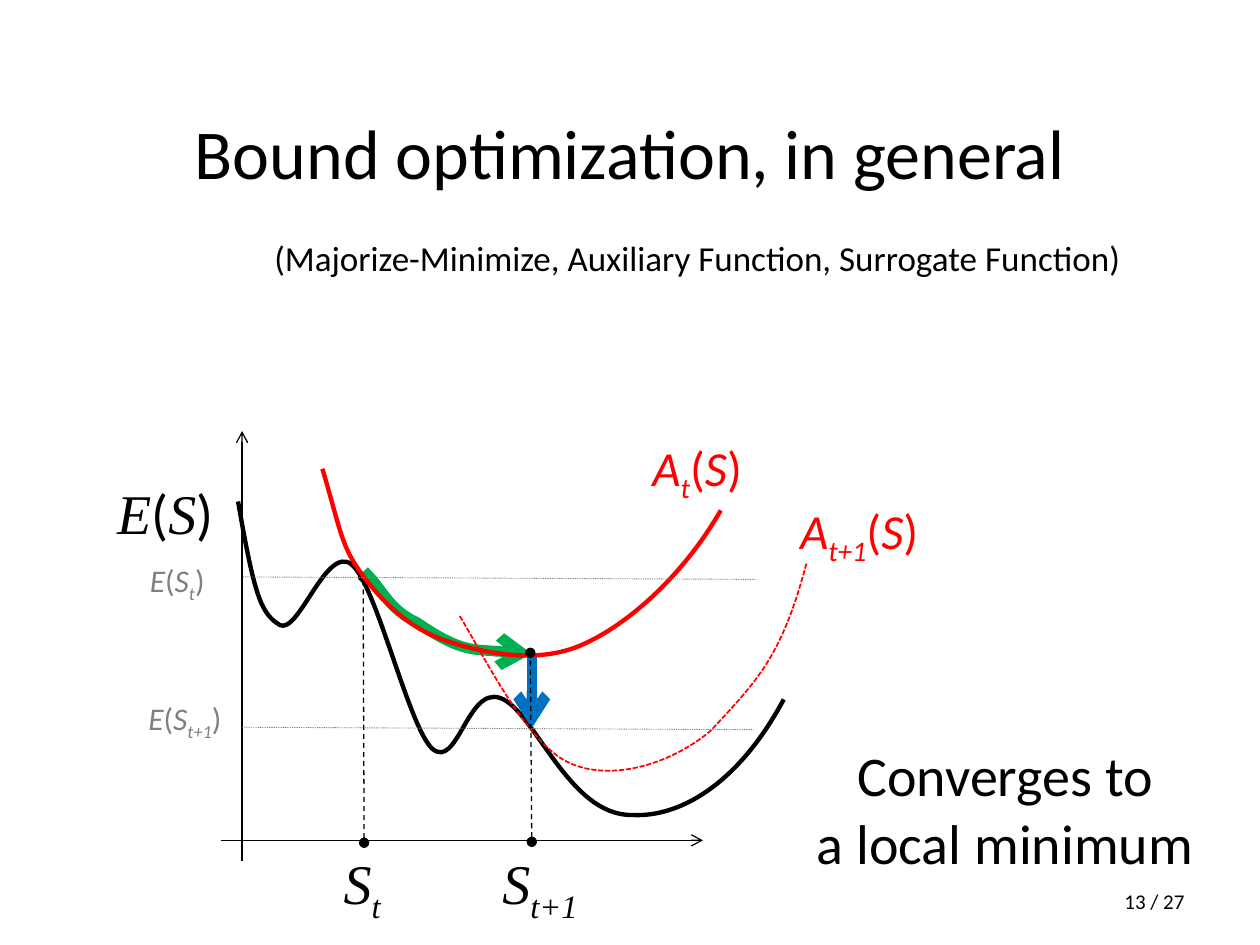
from dataclasses import dataclass
from typing import NamedTuple, Optional

from lxml.etree import SubElement
from pptx import Presentation
from pptx.dml.color import RGBColor
from pptx.enum.dml import MSO_LINE
from pptx.enum.shapes import MSO_CONNECTOR
from pptx.enum.text import MSO_ANCHOR, MSO_AUTO_SIZE, PP_ALIGN
from pptx.oxml.ns import qn
from pptx.util import Cm, Pt

BLACK = RGBColor(0x00, 0x00, 0x00)
GRAY = RGBColor(0x80, 0x80, 0x80)
RED = RGBColor(0xFF, 0x00, 0x00)
GREEN = RGBColor(0x00, 0xB0, 0x50)
BLUE = RGBColor(0x00, 0x70, 0xC0)
SANS, SERIF = "Calibri", "Times New Roman"

Point = tuple[float, float]


class Run(NamedTuple):
    text: str
    italic: bool = False
    subscript: bool = False
    font: Optional[str] = None


@dataclass
class Label:
    """Text box; its box is left, top, width, height in cm."""
    box: tuple[float, float, float, float]
    paragraphs: list[list[Run]]
    size: int
    color: RGBColor = BLACK
    font: str = SANS
    align: PP_ALIGN = PP_ALIGN.LEFT
    fixed: bool = False


@dataclass
class Stroke:
    color: RGBColor
    width: float
    dash: Optional[MSO_LINE] = None
    head: Optional[str] = None
    tail: Optional[str] = None


@dataclass
class Curve:
    """Bezier chain in cm: a start, then three points for each segment."""
    points: list[Point]
    stroke: Stroke


@dataclass
class Line:
    start: Point
    end: Point
    stroke: Stroke


def variable(name: str, subscript: str = "") -> list[Run]:
    runs = [Run(name, italic=True)]
    if subscript:
        runs.append(Run(subscript, italic=True, subscript=True))
    return runs


def function(name: list[Run], argument: list[Run]) -> list[Run]:
    return [*name, Run("(", font=SANS), *argument, Run(")", font=SANS)]


AXIS = Stroke(BLACK, 0.75, tail="arrow")
LEVEL = Stroke(GRAY, 0.5, MSO_LINE.ROUND_DOT)
DROP = Stroke(BLACK, 0.75, MSO_LINE.DASH, head="oval", tail="oval")

ENERGY = Curve([
    (4.8, 10.11),
    (5.13, 12.01), (5.26, 12.37), (5.64, 12.6),
    (6.02, 12.8), (6.58, 10.97), (7.09, 11.38),
    (7.59, 11.79), (8.23, 14.63), (8.71, 15.09),
    (9.22, 15.54), (9.42, 13.84), (10.08, 14.07),
    (10.77, 14.3), (11.46, 16.46), (12.75, 16.43),
    (13.67, 16.48), (14.86, 15.85), (15.8, 14.1),
], Stroke(BLACK, 2.5))
BOUND_STEP = Curve([
    (7.34, 11.51),
    (7.77, 11.94), (7.82, 12.27), (8.41, 12.55),
    (9.3, 13.16), (10.03, 13.13), (10.72, 13.18),
], Stroke(GREEN, 6, tail="arrow"))
BOUND = Curve([
    (6.5, 9.45),
    (6.88, 10.74), (6.88, 11.02), (7.32, 11.61),
    (7.75, 12.19), (8.33, 12.73), (9.09, 12.95),
    (9.83, 13.18), (10.92, 13.41), (11.84, 12.95),
    (12.75, 12.52), (13.82, 11.53), (14.53, 10.29),
], Stroke(RED, 2.5))
NEXT_BOUND = Curve([
    (9.27, 12.42),
    (9.73, 13.18), (10.62, 14.99), (11.46, 15.37),
    (12.29, 15.77), (13.51, 15.42), (14.33, 14.73),
    (15.24, 13.74), (15.75, 13.28), (16.26, 11.35),
], Stroke(RED, 1, MSO_LINE.SQUARE_DOT))

# Back to front
DRAWING = [
    ENERGY,
    Line((7.34, 16.99), (7.32, 11.63), DROP),
    BOUND_STEP,
    Line((10.72, 13.18), (10.72, 14.68), Stroke(BLUE, 6, tail="arrow")),
    BOUND,
    Line((4.45, 16.94), (14.17, 16.94), AXIS),
    NEXT_BOUND,
    Line((10.72, 16.97), (10.69, 13.16), DROP),
    Line((4.88, 17.35), (4.88, 8.69), AXIS),
    Line((4.9, 11.63), (15.24, 11.68), LEVEL),
    Line((4.88, 14.66), (15.21, 14.71), LEVEL),
]

S, E = variable("S"), variable("E")
S_NOW, S_NEXT = variable("S", "t"), variable("S", "t+1")
LABELS = [
    Label((5.28, 4.65, 17.75, 1.12),
          [[Run("(Majorize-Minimize, Auxiliary Function, Surrogate Function)")]], 20),
    Label((15.72, 14.17, 9.09, 4.24),
          [[Run("Converges to")], [Run("a local minimum")]], 32,
          align=PP_ALIGN.CENTER, fixed=True),
    Label((2.11, 9.53, 2.46, 1.63), [function(E, S)], 32, font=SERIF),
    Label((6.68, 16.99, 1.3, 1.63), [S_NOW], 32, font=SERIF),
    Label((9.88, 16.99, 2.18, 1.63), [S_NEXT], 32, font=SERIF),
    Label((2.77, 11.18, 1.68, 1.02), [function(E, S_NOW)], 18, GRAY),
    Label((2.74, 13.97, 2.08, 1.02), [function(E, S_NEXT)], 18, GRAY),
    Label((12.9, 8.69, 2.34, 1.45), [function(variable("A", "t"), S)], 28, RED),
    Label((15.88, 9.96, 3.02, 1.45), [function(variable("A", "t+1"), S)], 28, RED),
    Label((18.21, 17.65, 5.92, 1.02), [[Run("13 / 27")]], 12,
          align=PP_ALIGN.RIGHT, fixed=True),
]


def set_font(font, name: str, size: int, color: RGBColor) -> None:
    font.name, font.size = name, Pt(size)
    font.color.rgb = color


def apply_stroke(line, stroke: Stroke) -> None:
    line.color.rgb = stroke.color
    line.width = Pt(stroke.width)
    if stroke.dash:
        line.dash_style = stroke.dash
    for tag, kind in (("a:headEnd", stroke.head), ("a:tailEnd", stroke.tail)):
        if kind:
            SubElement(line._get_or_add_ln(), qn(tag), type=kind)


def draw_line(shapes, line: Line) -> None:
    ends = [Cm(value) for value in (*line.start, *line.end)]
    connector = shapes.add_connector(MSO_CONNECTOR.STRAIGHT, *ends)
    apply_stroke(connector.line, line.stroke)
    SubElement(connector._element.spPr, qn("a:effectLst"))


def draw_curve(shapes, curve: Curve) -> None:
    """Build a freeform through all points, then turn its lines into Beziers."""
    start, *others = [(Cm(x), Cm(y)) for x, y in curve.points]
    builder = shapes.build_freeform(*start)
    builder.add_line_segments(others, close=False)
    shape = builder.convert_to_shape()
    outline = next(shape._element.iter(qn("a:path")))
    segments = outline.findall(qn("a:lnTo"))
    for first in range(0, len(segments), 3):
        bezier = SubElement(outline, qn("a:cubicBezTo"))
        for segment in segments[first:first + 3]:
            bezier.append(segment[0])
            outline.remove(segment)
    shape.fill.background()
    shape.shadow.inherit = False
    apply_stroke(shape.line, curve.stroke)


def draw_label(shapes, label: Label) -> None:
    frame = shapes.add_textbox(*map(Cm, label.box)).text_frame
    frame.word_wrap = label.fixed
    if label.fixed:
        frame.vertical_anchor = MSO_ANCHOR.MIDDLE
    else:
        frame.auto_size = MSO_AUTO_SIZE.SHAPE_TO_FIT_TEXT
    for index, parts in enumerate(label.paragraphs):
        paragraph = frame.add_paragraph() if index else frame.paragraphs[0]
        paragraph.alignment = label.align
        set_font(paragraph.font, label.font, label.size, label.color)
        for part in parts:
            run = paragraph.add_run()
            run.text = part.text
            run.font.italic = part.italic
            if part.font:
                run.font.name = part.font
            if part.subscript:
                run.font._element.set("baseline", "-25000")


def main() -> None:
    presentation = Presentation()
    presentation.slide_width, presentation.slide_height = Cm(25.4), Cm(19.05)
    slide = presentation.slides.add_slide(presentation.slide_layouts[5])
    title = slide.shapes.title
    title.left, title.top, title.width, title.height = map(Cm, (1.27, 1.47, 22.86, 3.18))
    title.text_frame.text = "Bound optimization, in general"
    title.text_frame.vertical_anchor = MSO_ANCHOR.MIDDLE
    paragraph = title.text_frame.paragraphs[0]
    paragraph.alignment = PP_ALIGN.CENTER
    set_font(paragraph.font, SANS, 40, BLACK)
    for item in DRAWING:
        draw = draw_curve if isinstance(item, Curve) else draw_line
        draw(slide.shapes, item)
    for label in LABELS:
        draw_label(slide.shapes, label)
    presentation.save("out.pptx")


if __name__ == "__main__":
    main()
